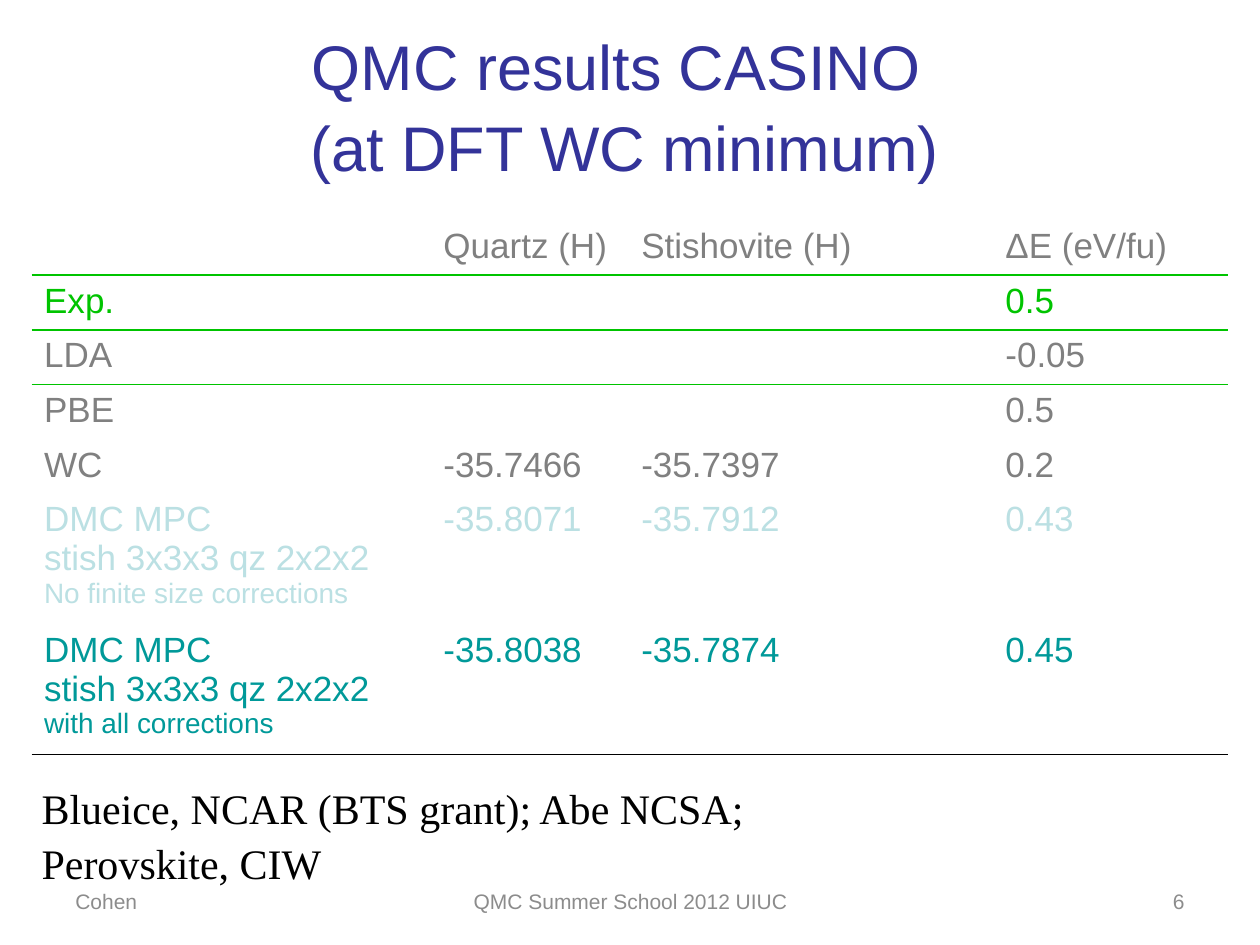
"""Build the slide of QMC results for quartz and stishovite."""
from lxml.etree import SubElement
from pptx import Presentation
from pptx.dml.color import RGBColor
from pptx.enum.text import MSO_ANCHOR, PP_ALIGN
from pptx.oxml.ns import qn
from pptx.util import Inches, Pt

NAVY = RGBColor(0x33, 0x33, 0x99)
GRAY = RGBColor(0x80, 0x80, 0x80)
FOOTER_GRAY = RGBColor(0x8C, 0x8C, 0x8C)
GREEN = RGBColor(0x00, 0xC4, 0x00)
PALE_TEAL = RGBColor(0xBB, 0xE0, 0xE3)
TEAL = RGBColor(0x00, 0x99, 0x99)
BLACK = RGBColor(0x00, 0x00, 0x00)
NO_STYLE = "{2D5ABB26-0587-4C30-8999-92F81FD0307C}"


def write(frame, text, size, color, font="Arial", align=PP_ALIGN.LEFT, spacing=None):
    frame.text = text
    for paragraph in frame.paragraphs:
        paragraph.alignment = align
        paragraph.line_spacing = spacing
        paragraph.font.size = Pt(size)
        for span in paragraph.runs:
            span.font.name = font
            span.font.size = Pt(size)
            span.font.color.rgb = color


def add_border(cell, side, color):
    line = SubElement(cell._tc.get_or_add_tcPr(), qn(f"a:{side}"), w=str(Pt(1)))
    fill = SubElement(line, qn("a:solidFill"))
    SubElement(fill, qn("a:srgbClr"), val=str(color))


deck = Presentation()
deck.slide_width, deck.slide_height = Inches(10), Inches(7.5)
page = deck.slides.add_slide(deck.slide_layouts[5])

title = page.shapes.title
title.left, title.top = Inches(0.5), Inches(0.22)
title.width, title.height = Inches(8.92), Inches(1.19)
title.text_frame.vertical_anchor = MSO_ANCHOR.MIDDLE
write(title.text_frame, "QMC results CASINO \v(at DFT WC minimum)", 36, NAVY,
      align=PP_ALIGN.CENTER, spacing=1.08)

footers = [
    (0.5, 2.33, "Cohen", PP_ALIGN.LEFT),
    (3.42, 3.17, "QMC Summer School 2012 UIUC", PP_ALIGN.CENTER),
    (7.17, 2.33, "6", PP_ALIGN.RIGHT),
]
for left, width, text, align in footers:
    box = page.shapes.add_textbox(Inches(left), Inches(6.95), Inches(width), Inches(0.4))
    box.text_frame.word_wrap = True
    box.text_frame.vertical_anchor = MSO_ANCHOR.MIDDLE
    write(box.text_frame, text, 12, FOOTER_GRAY, align=align)

method = "DMC MPC\nstish 3x3x3 qz 2x2x2\n"
results = [
    (GRAY, ["", "Quartz (H)", "Stishovite (H)", "ΔE (eV/fu)"]),
    (GREEN, ["Exp.", "", "", "0.5"]),
    (GRAY, ["LDA", "", "", "-0.05"]),
    (GRAY, ["PBE", "", "", "0.5"]),
    (GRAY, ["WC", "-35.7466", "-35.7397", "0.2"]),
    (PALE_TEAL, [method + "No finite size corrections", "-35.8071", "-35.7912", "0.43"]),
    (TEAL, [method + "with all corrections", "-35.8038", "-35.7874", "0.45"]),
]
rules = {0: GREEN, 1: GREEN, 6: BLACK}
table = page.shapes.add_table(len(results), 4, Inches(0.25), Inches(1.75),
                              Inches(9.5), Inches(2.31)).table
table.first_row = table.horz_banding = False
table._tbl.tblPr.find(qn("a:tableStyleId")).text = NO_STYLE
for column, width in zip(table.columns, [3.17, 1.57, 2.89, 1.87]):
    column.width = Inches(width)

for row, (color, texts) in enumerate(results):
    table.rows[row].height = Inches(0.33)
    for column, text in enumerate(texts):
        cell = table.cell(row, column)
        write(cell.text_frame, text, 20, color)
        if "\n" in text:
            cell.text_frame.paragraphs[-1].runs[0].font.size = Pt(16)
        if row - 1 in rules:
            add_border(cell, "lnT", rules[row - 1])
        if row in rules:
            add_border(cell, "lnB", rules[row])
        cell.fill.background()

credit = page.shapes.add_textbox(Inches(0.33), Inches(6.18), Inches(6.31), Inches(0.3))
frame = credit.text_frame
frame.word_wrap = True
frame.margin_left = frame.margin_right = frame.margin_top = frame.margin_bottom = 0
write(frame, "Blueice, NCAR (BTS grant); Abe NCSA; Perovskite, CIW", 24, BLACK,
      font="Times New Roman", spacing=1.08)

deck.save("out.pptx")
